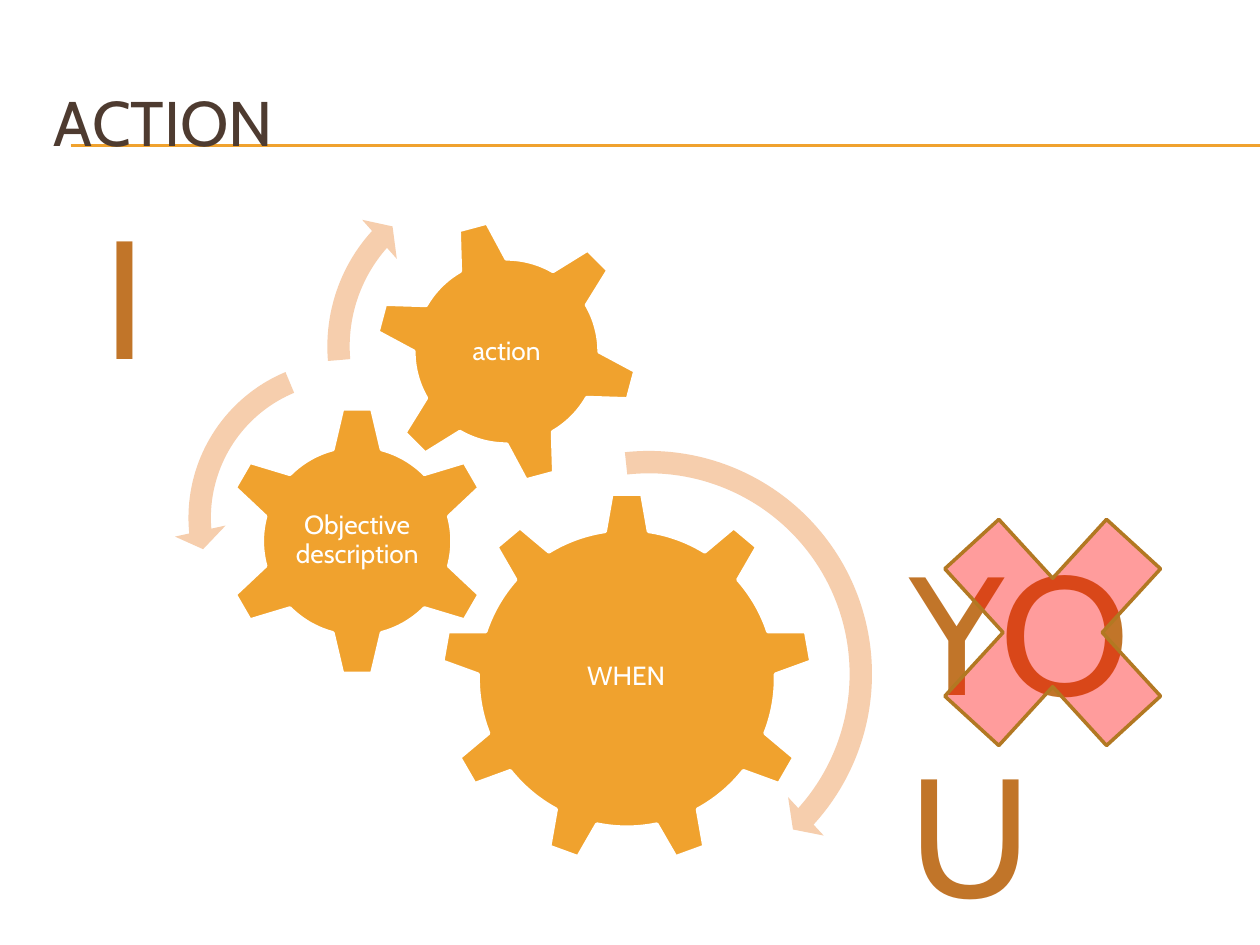
from dataclasses import dataclass

from lxml import etree
from pptx import Presentation
from pptx.dml.color import RGBColor
from pptx.enum.shapes import MSO_CONNECTOR, MSO_SHAPE
from pptx.enum.text import MSO_ANCHOR, PP_ALIGN
from pptx.oxml.ns import qn
from pptx.util import Inches, Pt


@dataclass(frozen=True)
class Theme:
    font: str = "Cabin"
    accent: str = "F0A22E"
    arrow: str = "F6CEAD"
    title: str = "4E3B30"
    letter: str = "C17529"
    cross: str = "FF0000"
    cross_line: str = "B27822"
    white: str = "FFFFFF"
    title_size: int = 36
    letter_size: int = 96
    label_size: int = 15


class SlideBuilder:
    def __init__(self, slide, theme):
        self.s = slide
        self.theme = theme

    def rule(self, x1, x2, y):
        line = self.s.shapes.add_connector(
            MSO_CONNECTOR.STRAIGHT, Inches(x1), Inches(y), Inches(x2), Inches(y))
        line.line.color.rgb = RGBColor.from_string(self.theme.accent)
        line.line.width = Pt(0.75)
        etree.SubElement(line._element.spPr, qn("a:effectLst"))

    def text(self, text, box, size, color, align=PP_ALIGN.LEFT,
             anchor=MSO_ANCHOR.TOP, inset=None, spacing=None):
        tf = self.s.shapes.add_textbox(*map(Inches, box)).text_frame
        tf.word_wrap = True
        tf.vertical_anchor = anchor
        if inset is not None:
            tf.margin_left = tf.margin_right = Inches(inset)
            tf.margin_top = tf.margin_bottom = Inches(inset)
        p = tf.paragraphs[0]
        p.text = text
        p.alignment = align
        p.line_spacing = spacing
        p.font.name = self.theme.font
        p.font.size = Pt(size)
        p.font.color.rgb = RGBColor.from_string(color)

    def shape(self, kind, box, fill, line=None, adjustments=(), rotation=0, alpha=None):
        sp = self.s.shapes.add_shape(kind, *map(Inches, box))
        sp.shadow.inherit = False
        sp.rotation = rotation
        for i, value in enumerate(adjustments):
            sp.adjustments[i] = value
        sp.fill.solid()
        sp.fill.fore_color.rgb = RGBColor.from_string(fill)
        if alpha is not None:
            color = sp._element.spPr.find(qn("a:solidFill"))[0]
            etree.SubElement(color, qn("a:alpha"), val=str(alpha * 1000))
        if line:
            sp.line.color.rgb = RGBColor.from_string(line)
            sp.line.width = Pt(2)
        else:
            sp.line.fill.background()

    def gear(self, kind, left, top, size, label, label_box, rotation=0):
        t = self.theme
        self.shape(kind, (left, top, size, size), t.accent, t.white, rotation=rotation)
        self.text(label, label_box, t.label_size, t.white, PP_ALIGN.CENTER,
                  MSO_ANCHOR.MIDDLE, inset=0.02, spacing=0.9)

    def arc_arrow(self, kind, left, top, size, adjustments):
        self.shape(kind, (left, top, size, size), self.theme.arrow,
                   adjustments=adjustments)


def main():
    prs = Presentation()
    prs.slide_width, prs.slide_height = Inches(10), Inches(7.5)
    theme = Theme()
    b = SlideBuilder(prs.slides.add_slide(prs.slide_layouts[6]), theme)

    # Title rule, large word and title
    for y in (1.15, 1.16):
        b.rule(0.56, 10, y)
    b.text("YOU", (7.12, 4.14, 2.67, 1.72), theme.letter_size, theme.letter)
    b.text("ACTION", (0.33, 0.5, 9.5, 0.92), theme.title_size, theme.title,
           anchor=MSO_ANCHOR.MIDDLE)

    # Gears with their labels
    b.gear(MSO_SHAPE.GEAR_9, 3.5, 3.91, 2.95, "WHEN", (4.09, 4.61, 1.76, 1.52))
    b.gear(MSO_SHAPE.GEAR_6, 1.76, 3.22, 2.15, "Objective description",
           (2.3, 3.76, 1.07, 1.06))
    b.gear(MSO_SHAPE.GEAR_6, 2.97, 1.74, 2.1, "action",
           (3.43, 2.2, 1.18, 1.18), rotation=345)

    # Arrows showing how the gears turn
    b.arc_arrow(MSO_SHAPE.CIRCULAR_ARROW, 3.26, 3.46, 3.78,
                (0.047, 2.99, 25.31, 158.3, 0.055))
    b.arc_arrow(MSO_SHAPE.LEFT_CIRCULAR_ARROW, 1.38, 2.74, 2.74,
                (0.065, 4.3, 104.89, 148.38, 0.075))
    b.arc_arrow(MSO_SHAPE.CIRCULAR_ARROW, 2.48, 1.27, 2.96,
                (0.06, 3.94, 133.14, 105.08, 0.07))

    # "I" is kept, "YOU" is crossed out
    b.text("I", (0.25, 1.47, 1.49, 1.72), theme.letter_size, theme.letter,
           PP_ALIGN.CENTER)
    b.shape(MSO_SHAPE.MATH_MULTIPLY, (7.12, 3.67, 2.47, 2.7), theme.cross,
            theme.cross_line, alpha=39)

    prs.save("out.pptx")


if __name__ == "__main__":
    main()
